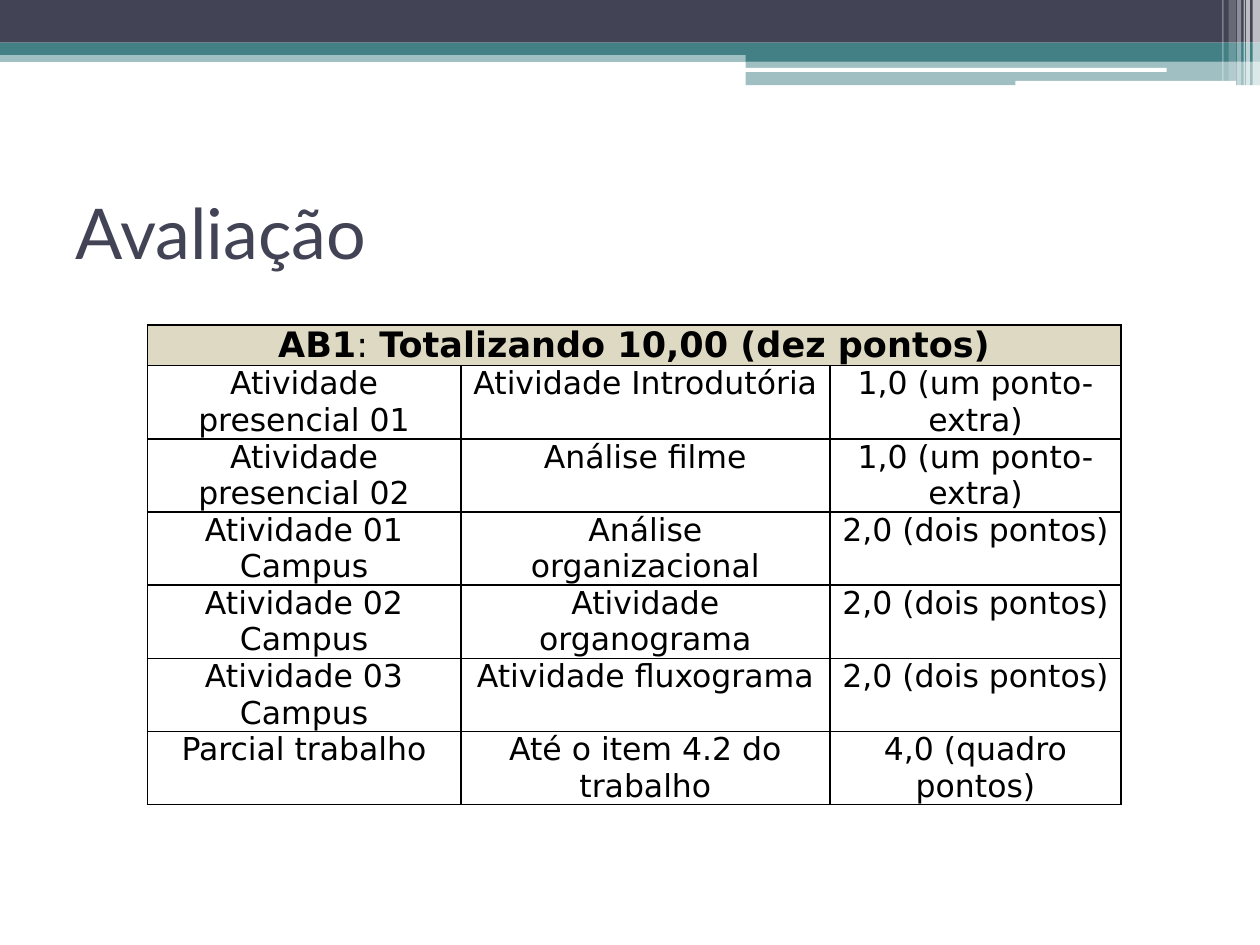
from dataclasses import dataclass

from lxml.etree import SubElement
from pptx import Presentation
from pptx.dml.color import RGBColor
from pptx.enum.shapes import MSO_SHAPE
from pptx.enum.text import MSO_ANCHOR, PP_ALIGN
from pptx.oxml import parse_xml
from pptx.oxml.ns import nsdecls, qn
from pptx.slide import Slide
from pptx.table import _Cell
from pptx.text.text import _Run
from pptx.util import Cm, Pt

NAVY = RGBColor(0x42, 0x44, 0x56)
TEAL = RGBColor(0x43, 0x80, 0x86)
WHITE = RGBColor(0xFF, 0xFF, 0xFF)
BLACK = RGBColor(0x00, 0x00, 0x00)
BEIGE = RGBColor(0xDD, 0xD9, 0xC3)


@dataclass(frozen=True)
class Band:
    left: float
    top: float
    width: float
    height: float
    color: RGBColor
    opacity: int = 100
    rounded: bool = False


BANDS = [
    Band(0, 1.02, 25.4, 0.23, TEAL, 50),
    Band(0, 0, 25.4, 0.86, NAVY),
    Band(0, 0.86, 25.4, 0.25, TEAL),
    Band(15.03, 0.99, 10.37, 0.25, TEAL),
    Band(15.03, 1.22, 10.37, 0.5, TEAL, 50),
    Band(15.01, 1.37, 8.51, 0.08, WHITE, rounded=True),
    Band(20.47, 1.63, 4.45, 0.1, WHITE, rounded=True),
    Band(25.25, 0, 0.15, 1.73, WHITE, 65),
    Band(25.12, 0, 0.08, 1.73, WHITE, 65),
    Band(25.07, 0, 0.03, 1.73, WHITE, 60),
    Band(24.94, 0, 0.08, 1.73, WHITE, 40),
    Band(24.77, 0, 0.15, 1.63, WHITE, 20),
    Band(24.64, 0, 0.03, 1.63, WHITE, 30),
]

HEADING = [("AB1", True), (": ", False), ("Totalizando 10,00 (dez pontos)", True)]
ACTIVITIES = [
    ("Atividade presencial 01", "Atividade Introdutória", "1,0 (um ponto-extra)"),
    ("Atividade presencial 02", "Análise filme", "1,0 (um ponto-extra)"),
    ("Atividade 01 Campus", "Análise organizacional", "2,0 (dois pontos)"),
    ("Atividade 02 Campus", "Atividade organograma", "2,0 (dois pontos)"),
    ("Atividade 03 Campus", "Atividade fluxograma", "2,0 (dois pontos)"),
    ("Parcial trabalho", "Até o item 4.2 do trabalho", "4,0 (quadro pontos)"),
]
COLUMN_WIDTHS = [6.32, 7.44, 5.87]
HEADING_HEIGHT = 0.82
ACTIVITY_HEIGHT = 1.47


def draw_band(slide: Slide, band: Band) -> None:
    preset = MSO_SHAPE.ROUNDED_RECTANGLE if band.rounded else MSO_SHAPE.RECTANGLE
    bar = slide.shapes.add_shape(
        preset, Cm(band.left), Cm(band.top), Cm(band.width), Cm(band.height)
    )
    bar.shadow.inherit = False
    bar.line.fill.background()
    bar.fill.solid()
    bar.fill.fore_color.rgb = band.color
    if band.opacity < 100:
        color = bar.fill._xPr.find(qn("a:solidFill"))[0]
        SubElement(color, qn("a:alpha"), val=str(band.opacity * 1000))


def format_run(run: _Run, font: str, size: int, color: RGBColor, bold: bool = False) -> None:
    run.font.name = font
    run.font.size = Pt(size)
    run.font.color.rgb = color
    run.font.bold = bold


def format_cell(cell: _Cell) -> None:
    cell.margin_left = cell.margin_right = Cm(0.18)
    cell.margin_top = cell.margin_bottom = Cm(0)
    cell.vertical_anchor = MSO_ANCHOR.TOP
    cell.fill.background()
    properties = cell._tc.get_or_add_tcPr()
    for position, side in enumerate(("lnL", "lnR", "lnT", "lnB")):
        border = parse_xml(
            f'<a:{side} {nsdecls("a")} w="{Pt(1)}"><a:solidFill>'
            f'<a:srgbClr val="{BLACK}"/></a:solidFill></a:{side}>'
        )
        properties.insert(position, border)
    paragraph = cell.text_frame.paragraphs[0]
    paragraph.alignment = PP_ALIGN.CENTER
    paragraph.space_before = Pt(6)


def draw_title(slide: Slide) -> None:
    title = slide.shapes.title
    title.left, title.top = Cm(1.27), Cm(3.18)
    title.width, title.height = Cm(22.86), Cm(2.97)
    title.text_frame.text = "Avaliação"
    title.text_frame.vertical_anchor = MSO_ANCHOR.MIDDLE
    paragraph = title.text_frame.paragraphs[0]
    paragraph.alignment = PP_ALIGN.LEFT
    format_run(paragraph.runs[0], "Lato", 40, NAVY)


def draw_grades(slide: Slide) -> None:
    grades = slide.shapes.add_table(
        len(ACTIVITIES) + 1,
        len(COLUMN_WIDTHS),
        Cm(2.97),
        Cm(6.55),
        Cm(sum(COLUMN_WIDTHS)),
        Cm(HEADING_HEIGHT + ACTIVITY_HEIGHT * len(ACTIVITIES)),
    ).table
    grades.first_row = False
    grades.horz_banding = False
    for column, width in zip(grades.columns, COLUMN_WIDTHS):
        column.width = Cm(width)
    for row_index, row in enumerate(grades.rows):
        row.height = Cm(ACTIVITY_HEIGHT if row_index else HEADING_HEIGHT)
        for cell in row.cells:
            format_cell(cell)

    heading = grades.cell(0, 0)
    heading.merge(grades.cell(0, len(COLUMN_WIDTHS) - 1))
    heading.fill.solid()
    heading.fill.fore_color.rgb = BEIGE
    for wording, bold in HEADING:
        run = heading.text_frame.paragraphs[0].add_run()
        run.text = wording
        format_run(run, "DejaVu Sans", 20, BLACK, bold)

    for row_index, activity in enumerate(ACTIVITIES, start=1):
        for column_index, wording in enumerate(activity):
            paragraph = grades.cell(row_index, column_index).text_frame.paragraphs[0]
            paragraph.text = wording
            format_run(paragraph.runs[0], "DejaVu Sans", 18, BLACK)


def main() -> None:
    presentation = Presentation()
    presentation.slide_width = Cm(25.4)
    presentation.slide_height = Cm(19.05)
    slide = presentation.slides.add_slide(presentation.slide_layouts[5])
    for band in BANDS:
        draw_band(slide, band)
    draw_title(slide)
    draw_grades(slide)
    presentation.save("out.pptx")


if __name__ == "__main__":
    main()
